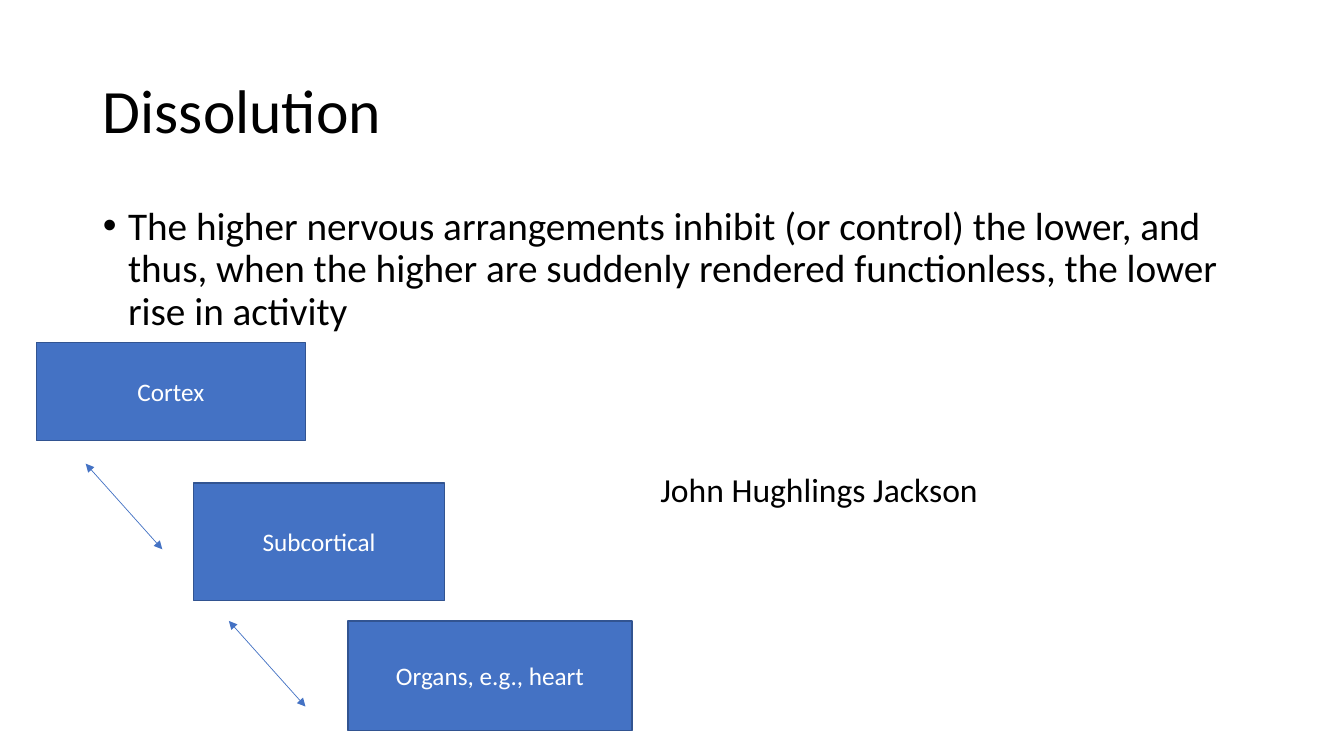
from lxml import etree
from pptx import Presentation
from pptx import util as u
from pptx.dml.color import RGBColor
from pptx.enum import shapes, text
from pptx.oxml.ns import qn

TITLE = "Dissolution"
STATEMENT = ("The higher nervous arrangements inhibit (or control) the lower, and thus, "
             "when the higher are suddenly rendered functionless, the lower rise in activity")
AUTHOR = "John Hughlings Jackson"
LEVELS = [
    ("Cortex", (0.36, 3.4, 2.67, 0.97)),
    ("Subcortical", (1.92, 4.79, 2.49, 1.17)),
    ("Organs, e.g., heart", (3.45, 6.16, 2.82, 1.09)),
]
LINK_STARTS = [(0.85, 4.6), (2.27, 6.16)]
LINK_SPAN = (0.76, 0.85)
COLORS = {"text": "000000", "level": "4472C4", "border": "325491", "label": "FFFFFF"}
FONT = "Calibri"


def rgb(name):
    return RGBColor.from_string(COLORS[name])


def inches(values):
    return [u.Inches(value) for value in values]


def place(part, box):
    part.left, part.top, part.width, part.height = inches(box)


def write(part, words, size=18, color="text", align=text.PP_ALIGN.LEFT,
          anchor=text.MSO_ANCHOR.TOP, spacing=1.0, bullet=None):
    frame = part.text_frame
    frame.word_wrap = True
    frame.auto_size = text.MSO_AUTO_SIZE.NONE
    frame.vertical_anchor = anchor
    frame.text = words
    paragraph = frame.paragraphs[0]
    paragraph.alignment = align
    paragraph.line_spacing = spacing
    paragraph.space_before = u.Pt(0)
    if bullet:
        properties = paragraph._p.get_or_add_pPr()
        properties.set("marL", str(u.Inches(0.25)))
        properties.set("indent", str(-u.Inches(0.25)))
        etree.SubElement(properties, qn("a:buFont")).set("typeface", "Arial")
        etree.SubElement(properties, qn("a:buChar")).set("char", bullet)
    font = paragraph.runs[0].font
    font.name = FONT
    font.size = u.Pt(size)
    font.color.rgb = rgb(color)


def add_level(slide, label, box):
    level = slide.shapes.add_shape(shapes.MSO_SHAPE.RECTANGLE, *inches(box))
    level.shadow.inherit = False
    level.fill.solid()
    level.fill.fore_color.rgb = rgb("level")
    level.line.color.rgb = rgb("border")
    level.line.width = u.Pt(1)
    write(level, label, color="label", align=text.PP_ALIGN.CENTER,
          anchor=text.MSO_ANCHOR.MIDDLE)


def add_link(slide, start):
    end = [a + b for a, b in zip(start, LINK_SPAN)]
    link = slide.shapes.add_connector(shapes.MSO_CONNECTOR.STRAIGHT, *inches([*start, *end]))
    link.line.color.rgb = rgb("level")
    link.line.width = u.Pt(0.5)
    outline = link.line._get_or_add_ln()
    for tip in ("a:headEnd", "a:tailEnd"):
        etree.SubElement(outline, qn(tip)).set("type", "triangle")
    etree.SubElement(link._element.spPr, qn("a:effectLst"))


def main():
    deck = Presentation()
    deck.slide_width, deck.slide_height = inches((13.33, 7.5))
    slide = deck.slides.add_slide(deck.slide_layouts[1])

    title, statement = slide.placeholders
    place(title, (0.92, 0.4, 11.5, 1.45))
    write(title, TITLE, size=44, anchor=text.MSO_ANCHOR.MIDDLE, spacing=0.9)
    place(statement, (0.92, 2, 11.5, 4.76))
    write(statement, STATEMENT, size=28, spacing=0.9, bullet="•")

    author = slide.shapes.add_textbox(*inches((6.45, 4.6, 4.68, 0.5)))
    write(author, AUTHOR, size=24)

    for label, box in LEVELS:
        add_level(slide, label, box)
    for start in LINK_STARTS:
        add_link(slide, start)

    deck.save("out.pptx")


if __name__ == "__main__":
    main()
